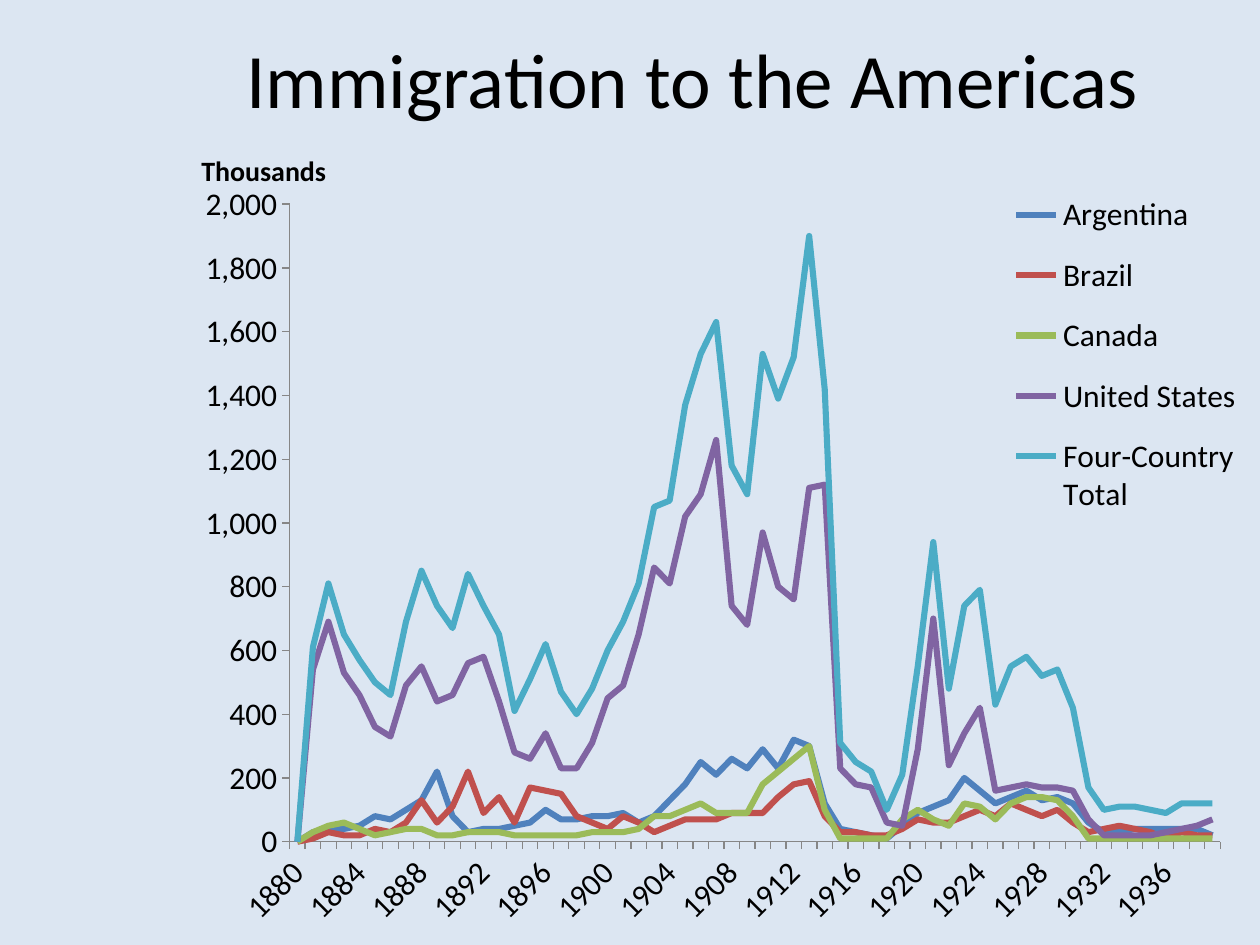
from dataclasses import dataclass

from lxml import etree
from pptx import Presentation
from pptx.chart.data import CategoryChartData
from pptx.dml.color import RGBColor
from pptx.enum.chart import XL_CHART_TYPE, XL_LEGEND_POSITION, XL_TICK_MARK
from pptx.enum.text import MSO_ANCHOR, MSO_AUTO_SIZE, PP_ALIGN
from pptx.oxml.ns import qn
from pptx.util import Cm, Pt

LINE_CHART = XL_CHART_TYPE.LINE
LEGEND_RIGHT = XL_LEGEND_POSITION.RIGHT
TICK_OUTSIDE = XL_TICK_MARK.OUTSIDE
TICK_NONE = XL_TICK_MARK.NONE
MIDDLE = MSO_ANCHOR.MIDDLE
GROW = MSO_AUTO_SIZE.SHAPE_TO_FIT_TEXT
CENTER = PP_ALIGN.CENTER
LEFT = PP_ALIGN.LEFT


@dataclass(frozen=True)
class Theme:
    font: str = "Calibri"
    background: str = "DCE6F2"
    text: str = "000000"
    axis: str = "868686"
    title_size: int = 44
    chart_size: int = 18
    unit_size: int = 16
    series_width: float = 3.5
    axis_width: float = 0.75


@dataclass(frozen=True)
class CountryLine:
    name: str
    color: str
    values: list


@dataclass(frozen=True)
class Area:
    x: float
    y: float
    w: float
    h: float


THEME = Theme()
YEARS = range(1880, 1940)
PLOT_AREA = Area(0.094, 0.059, 0.869, 0.81)
LEGEND_AREA = Area(0.76, 0.02, 0.23, 0.46)
GAP = None


def fill_gaps(*points) -> list:
    known = [place for place, value in enumerate(points) if value is not GAP]
    values = list(points)
    for start, end in zip(known, known[1:]):
        slope = (points[end] - points[start]) / (end - start)
        for place in range(start + 1, end):
            values[place] = round(points[start] + slope * (place - start), -1)
    return [None] + values


COUNTRIES = [
    CountryLine("Argentina", "4F81BD", fill_gaps(
        30, GAP, GAP, 50, 80, 70, GAP, 130, 220, 80, 30, GAP, GAP, GAP, 60,
        100, 70, GAP, GAP, 80, 90, 60, 80, GAP, 180, 250, 210, 260, 230, 290,
        230, 320, 300, 120, 40, GAP, GAP, 10, GAP, 90, GAP, 130, 200, GAP, 120,
        GAP, 160, 130, 140, 120, 60, 30, GAP, GAP, 40, GAP, GAP, 40, 20)),
    CountryLine("Brazil", "C0504D", fill_gaps(
        10, 30, GAP, 20, 40, 30, 60, 130, 60, 110, 220, 90, 140, 60, 170,
        GAP, 150, 80, GAP, 40, 80, GAP, 30, GAP, 70, GAP, 70, 90, GAP, 90,
        GAP, 180, 190, 80, 30, GAP, GAP, 20, GAP, 70, 60, 60, GAP, 100, 80,
        120, GAP, 80, 100, GAP, 30, GAP, 50, GAP, 30, 10, 30, GAP, 20)),
    CountryLine("Canada", "9BBB59", fill_gaps(
        30, 50, 60, 40, 20, GAP, 40, 40, 20, 20, 30, GAP, 30, 20, GAP,
        GAP, GAP, 20, 30, GAP, 30, 40, 80, 80, GAP, 120, 90, GAP, 90, 180,
        GAP, GAP, 300, 100, 10, GAP, GAP, 10, 70, 100, 70, 50, 120, 110, 70,
        120, 140, GAP, 130, 80, 10, GAP, GAP, GAP, GAP, GAP, GAP, GAP, 10)),
    CountryLine("United States", "8064A2", fill_gaps(
        540, 690, 530, 460, 360, 330, 490, 550, 440, 460, 560, 580, 440, 280, 260,
        340, 230, 230, 310, 450, 490, 650, 860, 810, 1020, 1090, 1260, 740, 680, 970,
        800, 760, 1110, 1120, 230, 180, 170, 60, 50, 290, 700, 240, 340, 420, 160,
        GAP, 180, 170, 170, 160, 70, 20, GAP, GAP, 20, GAP, GAP, 50, 70)),
]
TOTAL = [None] + [sum(year) for year in zip(*(line.values[1:] for line in COUNTRIES))]
LINES = COUNTRIES + [CountryLine("Four-Country Total", "4BACC6", TOTAL)]


def write_text(shape, text: str, *, size: float, bold: bool = False, align=LEFT) -> None:
    para = shape.text_frame.paragraphs[0]
    para.alignment = align
    span = para.add_run()
    span.text = text
    style_font(span.font, size=size, bold=bold)


def style_font(font, *, size: float, bold: bool = False) -> None:
    font.name = THEME.font
    font.size = Pt(size)
    font.bold = bold
    font.color.rgb = RGBColor.from_string(THEME.text)


def style_line(line, color: str, width: float) -> None:
    line.color.rgb = RGBColor.from_string(color)
    line.width = Pt(width)


def set_layout(parent, area: Area, index: int, inner: bool = False) -> None:
    for old_layout in parent.findall(qn("c:layout")):
        parent.remove(old_layout)
    layout = etree.Element(qn("c:layout"))
    manual = etree.SubElement(layout, qn("c:manualLayout"))
    settings = [("layoutTarget", "inner")] if inner else []
    settings += [("xMode", "edge"), ("yMode", "edge")]
    settings += [(key, str(getattr(area, key))) for key in "xywh"]
    for tag, value in settings:
        etree.SubElement(manual, qn(f"c:{tag}")).set("val", value)
    parent.insert(index, layout)


def style_axes(chart) -> None:
    for axis in (chart.category_axis, chart.value_axis):
        axis.has_major_gridlines = False
        axis.major_tick_mark = TICK_OUTSIDE
        axis.minor_tick_mark = TICK_NONE
        style_line(axis.format.line, THEME.axis, THEME.axis_width)
        style_font(axis.tick_labels.font, size=THEME.chart_size)
    values = chart.value_axis
    values.minimum_scale, values.maximum_scale, values.major_unit = 0, 2000, 200
    values.tick_labels.number_format = "#,##0"
    values.tick_labels.number_format_is_linked = False

    category = chart.element.xpath(".//c:catAx")[0]
    category.find(f"{qn('c:txPr')}/{qn('a:bodyPr')}").set("rot", "-2700000")
    last_setting = category.find(qn("c:noMultiLvlLbl"))
    for tag, step in (("tickLblSkip", 4), ("tickMarkSkip", 1)):
        skip = etree.Element(qn(f"c:{tag}"))
        skip.set("val", str(step))
        last_setting.addprevious(skip)


def add_immigration_chart(page) -> None:
    data = CategoryChartData()
    data.categories = [str(year) for year in YEARS]
    for line in LINES:
        data.add_series(line.name, line.values)
    chart = page.shapes.add_chart(
        LINE_CHART, Cm(3.81), Cm(3.18), Cm(21.59), Cm(15.87), data).chart
    chart.has_title = False
    style_font(chart.font, size=THEME.chart_size)
    chart.plots[0].vary_by_categories = False
    for series, line in zip(chart.plots[0].series, LINES):
        series.smooth = False
        style_line(series.format.line, line.color, THEME.series_width)
    style_axes(chart)

    chart.has_legend = True
    chart.legend.position = LEGEND_RIGHT
    chart.legend.include_in_layout = False
    style_font(chart.legend.font, size=THEME.chart_size)
    set_layout(chart.element.xpath(".//c:legend")[0], LEGEND_AREA, 1)
    set_layout(chart.element.xpath(".//c:plotArea")[0], PLOT_AREA, 0, inner=True)
    chart.element.xpath(".//c:dispBlanksAs")[0].set("val", "zero")


def main() -> None:
    deck = Presentation()
    deck.slide_width, deck.slide_height = Cm(25.4), Cm(19.05)
    page = deck.slides.add_slide(deck.slide_layouts[5])
    page.background.fill.solid()
    page.background.fill.fore_color.rgb = RGBColor.from_string(THEME.background)

    title = page.shapes.title
    title.left, title.top, title.width, title.height = Cm(3.81), Cm(-0.03), Cm(20.32), Cm(3.2)
    title.text_frame.vertical_anchor = MIDDLE
    write_text(title, "Immigration to the Americas", size=THEME.title_size, align=CENTER)

    add_immigration_chart(page)

    unit_box = page.shapes.add_textbox(Cm(3.81), Cm(2.97), Cm(3.07), Cm(0.94))
    unit_box.text_frame.word_wrap = False
    unit_box.text_frame.auto_size = GROW
    write_text(unit_box, "Thousands", size=THEME.unit_size, bold=True)
    deck.save("out.pptx")


if __name__ == "__main__":
    main()
